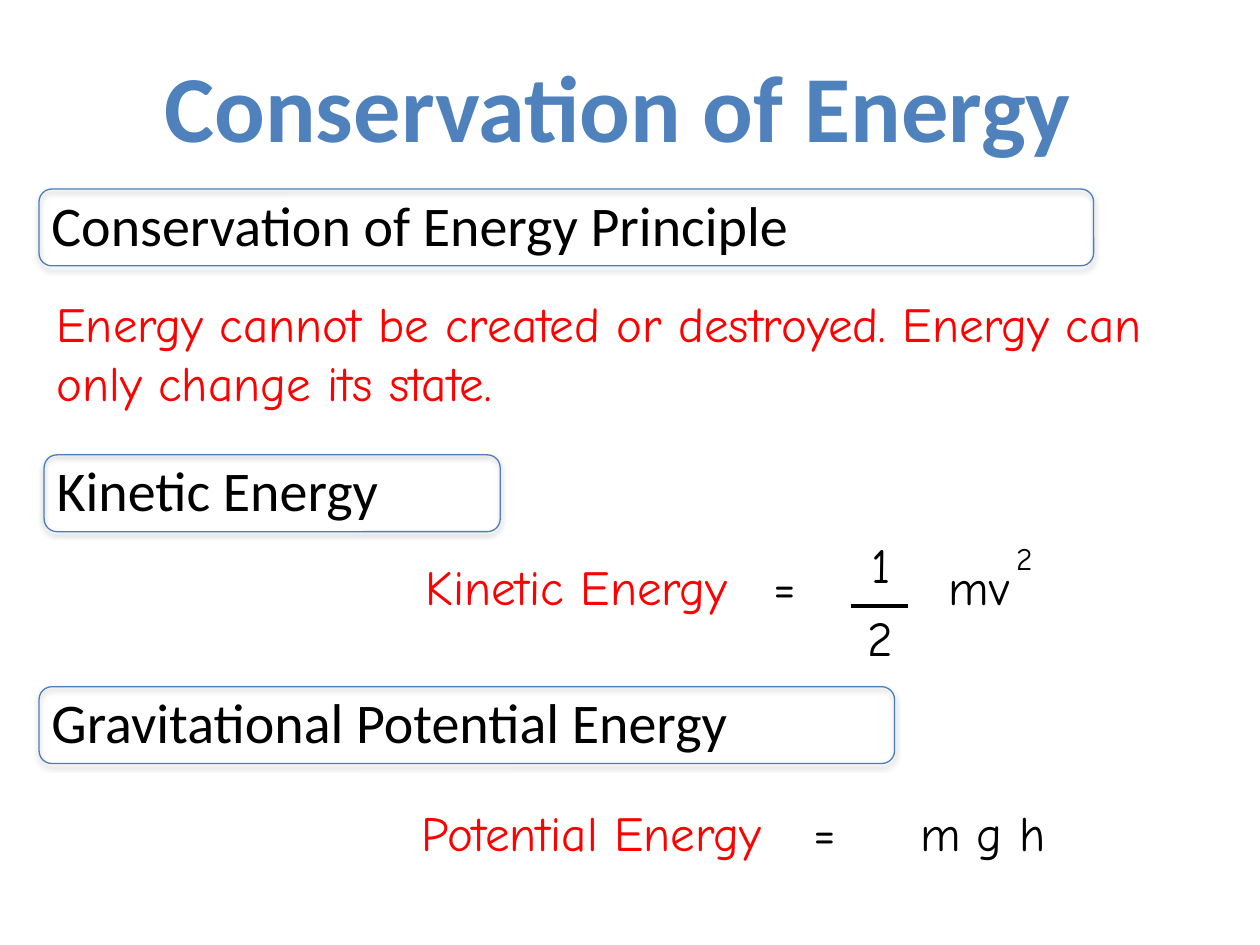
from lxml.etree import SubElement
from pptx import Presentation
from pptx.dml.color import RGBColor
from pptx.enum.shapes import MSO_CONNECTOR, MSO_SHAPE
from pptx.enum.text import MSO_AUTO_SIZE, PP_ALIGN
from pptx.oxml import parse_xml
from pptx.oxml.ns import nsdecls, qn
from pptx.util import Inches, Pt

BLACK = "000000"
RED = "FF0000"
TITLE_BLUE = "4F81BD"
TITLE_OUTLINE = "054697"
BORDER_BLUE = "4B7EBC"

TITLE = {"name": "Calibri", "size": Pt(54), "bold": True}
HEADING = {"name": "Calibri", "size": Pt(32)}
BODY = {"name": "Comic Neue", "size": Pt(28)}
EXPONENT = {"name": "Comic Neue", "size": Pt(18)}


def apply_format(target, values):
    for name, value in values.items():
        setattr(target, name, value)


def color(hex_value):
    return RGBColor.from_string(hex_value)


def add_text(shapes, text, box, font, hex_value=BLACK, align=PP_ALIGN.LEFT, wrap=True):
    shape = shapes.add_textbox(*map(Inches, box))
    apply_format(shape.text_frame, {"word_wrap": wrap, "auto_size": MSO_AUTO_SIZE.SHAPE_TO_FIT_TEXT})
    paragraph = shape.text_frame.paragraphs[0]
    paragraph.alignment = align
    run = paragraph.add_run()
    run.text = text
    apply_format(run.font, font)
    run.font.color.rgb = color(hex_value)
    return run


def add_title(shapes, text, box):
    run = add_text(shapes, text, box, TITLE, TITLE_BLUE, PP_ALIGN.CENTER, False)
    outline = parse_xml(
        f'<a:ln {nsdecls("a")} w="12700"><a:solidFill>'
        f'<a:srgbClr val="{TITLE_OUTLINE}"/></a:solidFill></a:ln>'
    )
    run.font._element.insert(0, outline)


def add_shadow(shape):
    shape.shadow.inherit = False
    effects = shape._element.spPr.find(qn("a:effectLst"))
    effects.append(parse_xml(
        f'<a:outerShdw {nsdecls("a")} blurRad="40000" dist="23000" dir="5400000" rotWithShape="0">'
        f'<a:srgbClr val="{BLACK}"><a:alpha val="35000"/></a:srgbClr></a:outerShdw>'
    ))


def add_heading(slide, text, left, top, width):
    shapes = slide.shapes.add_group_shape().shapes
    frame = shapes.add_shape(
        MSO_SHAPE.ROUNDED_RECTANGLE, *map(Inches, (left, top, width, 0.61))
    )
    frame.fill.background()
    frame.line.color.rgb = color(BORDER_BLUE)
    frame.line.width = Pt(0.75)
    add_shadow(frame)
    add_text(shapes, text, (left, top - 0.04, width, 0.64), HEADING)


def add_equation_start(slide, name, left, top, width, equals_left):
    shapes = slide.shapes.add_group_shape().shapes
    add_text(shapes, "=", (equals_left, top - 0.01, 0.4, 0.57), BODY, wrap=False)
    add_text(shapes, name, (left, top, width, 0.57), BODY, RED, wrap=False)
    return shapes


def add_fraction(shapes, numerator, denominator, left, bar_top):
    for text, top in ((numerator, bar_top - 0.62), (denominator, bar_top - 0.04)):
        add_text(shapes, text, (left, top, 0.78, 0.57), BODY, align=PP_ALIGN.CENTER)
    ends = (left + 0.15, bar_top, left + 0.61, bar_top)
    bar = shapes.add_connector(MSO_CONNECTOR.STRAIGHT, *map(Inches, ends))
    bar.line.color.rgb = color(BLACK)
    bar.line.width = Pt(2)
    SubElement(bar._element.spPr, qn("a:effectLst"))


def main():
    presentation = Presentation()
    apply_format(presentation, {"slide_width": Inches(10), "slide_height": Inches(7.5)})
    slide = presentation.slides.add_slide(presentation.slide_layouts[6])

    add_title(slide.shapes, "Conservation of Energy", (1.16, 0.33, 7.49, 1.01))

    add_heading(slide, "Kinetic Energy", 0.35, 3.61, 3.62)
    kinetic = add_equation_start(slide, "Kinetic Energy", 3.28, 4.37, 2.76, 6.04)
    add_fraction(kinetic, "1", "2", 6.6, 4.81)
    add_text(kinetic, "mv", (7.38, 4.37, 0.78, 0.57), BODY, align=PP_ALIGN.CENTER)
    add_text(kinetic, "2", (7.74, 4.23, 0.78, 0.4), EXPONENT, align=PP_ALIGN.CENTER)

    add_heading(slide, "Gravitational Potential Energy", 0.31, 5.45, 6.79)
    potential = add_equation_start(slide, "Potential Energy", 3.25, 6.32, 3.12, 6.36)
    add_text(potential, "m g h", (7.11, 6.32, 1.38, 0.57), BODY, align=PP_ALIGN.CENTER)

    principle = "Energy cannot be created or destroyed. Energy can only change its state."
    add_text(slide.shapes, principle, (0.35, 2.28, 9.03, 1.04), BODY, RED)
    add_heading(slide, "Conservation of Energy Principle", 0.31, 1.5, 8.37)

    presentation.save("out.pptx")


if __name__ == "__main__":
    main()
